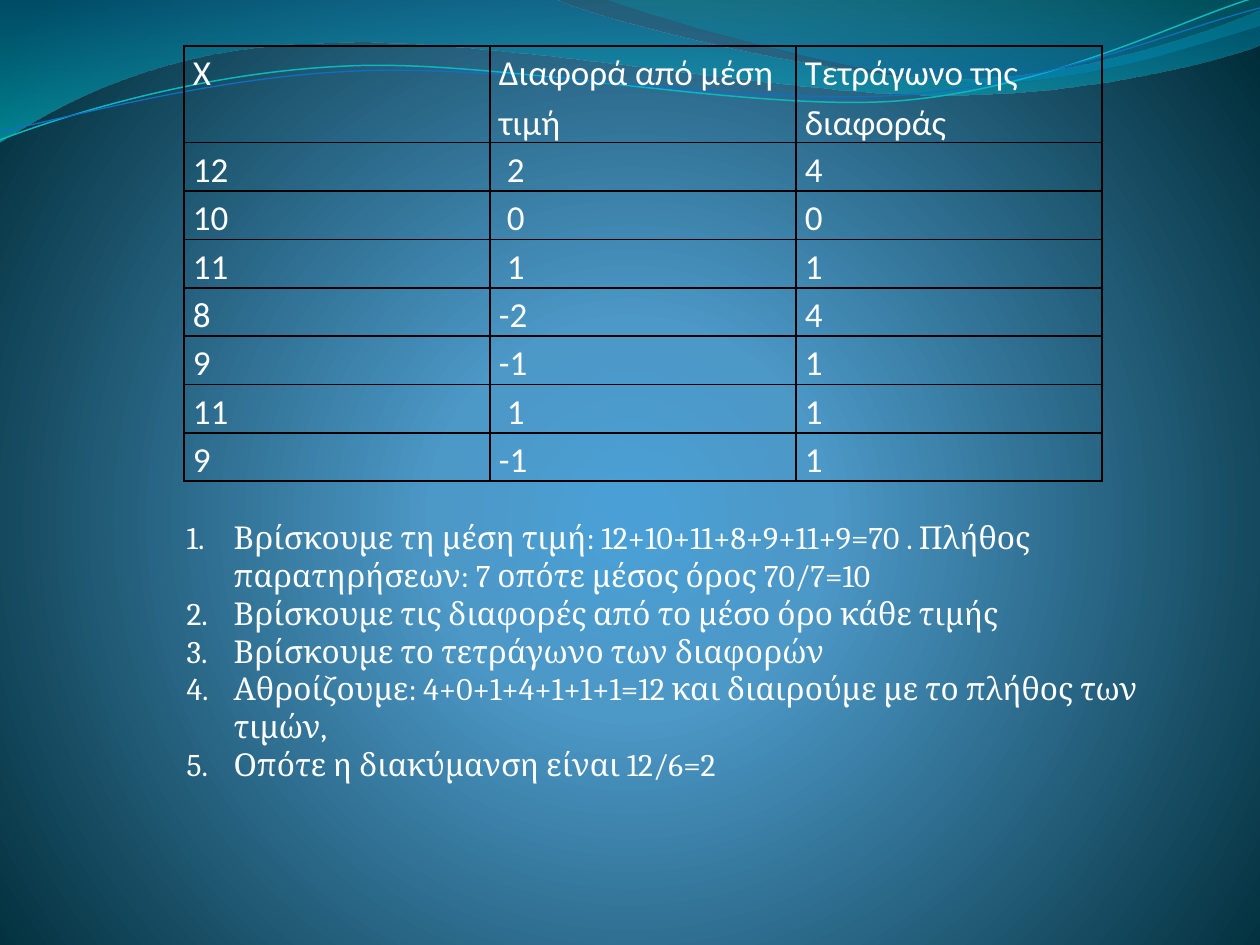
from math import cos, radians, sin

from lxml.etree import SubElement
from pptx import Presentation
from pptx.dml.color import RGBColor as RGB
from pptx.enum.text import MSO_AUTO_SIZE as Fit
from pptx.oxml import parse_xml
from pptx.oxml.ns import nsdecls, qn
from pptx.util import Emu, Pt

ROWS = [
    ("Χ", "Διαφορά από μέση τιμή", "Τετράγωνο της διαφοράς"),
    ("12", " 2", "4"),
    ("10", " 0", "0"),
    ("11", " 1", "1"),
    ("8", "-2", "4"),
    ("9", "-1", "1"),
    ("11", " 1", "1"),
    ("9", "-1", "1"),
]
STEPS = [
    "Βρίσκουμε τη μέση τιμή: 12+10+11+8+9+11+9=70 . Πλήθος παρατηρήσεων: 7 οπότε μέσος όρος 70/7=10",
    "Βρίσκουμε τις διαφορές από το μέσο όρο κάθε τιμής",
    "Βρίσκουμε το τετράγωνο των διαφορών",
    "Αθροίζουμε: 4+0+1+4+1+1+1=12 και διαιρούμε με το πλήθος των τιμών,",
    "Οπότε η διακύμανση είναι 12/6=2",
]

THEME = {
    "text": "FFFFFF",
    "border": "000000",
    "cell": ("Calibri", 20),
    "step": ("Cambria", 18),
    "number": "Calibri",
    # gradient stops: position %, colour, opacity %
    "back": [(0, "4AA0D6", 100), (25, "4C98C7", 100), (100, "002C38", 100)],
    "wide": [(0, "0074A1", 45), (100, "00C6CF", 55)],
    "right": [(0, "00A1A9", 30), (80, "008BBF", 45)],
}
GLOW = '<a:path path="circle"><a:fillToRect l="10000" t="110000" r="10000" b="100000"/></a:path>'
DOWN = '<a:lin ang="5400000" scaled="1"/>'

# Outlines in px: one point is a straight move, three points are a Bezier curve
BANDS = [
    ("wide", [[(0, 0)], [(554, -1)],
              [(600, 21), (837, 79), (955, 79)],
              [(1075, 79), (1207, 33), (1260, 11)], [(1261, 45)],
              [(1238, 55), (1096, 96), (940, 95)],
              [(784, 95), (481, 35), (324, 43)],
              [(163, 45), (58, 105), (-1, 142)]]),
    ("right", [[(604, -1)],
               [(641, 14), (859, 78), (969, 82)],
               [(1079, 87), (1211, 40), (1260, 26)], [(1260, 0)]]),
]
# Colour, width, centre, outline
LINES = [
    ("0AB8BF", 0.85, (629, 72),
     [[(0, 140)], [(60, 117), (199, 72), (349, 66)],
      [(498, 59), (747, 112), (898, 101)], [(1050, 89), (1182, 19), (1257, -3)]]),
    ("0F6FC6", 0.75, (629, 74),
     [[(0, 131)], [(59, 121), (207, 77), (357, 71)],
      [(508, 64), (752, 106), (903, 95)], [(1053, 84), (1186, 26), (1260, 8)]]),
]
TILT = 2.7


def px(n):
    return Emu(round(n * 914400 / 126))


def paint(fill, host, stops, shade):
    """Give the fill inside host a gradient with opacity."""
    fill.background()
    marks = "".join(
        f'<a:gs pos="{pos * 1000}"><a:srgbClr val="{color}">'
        f'<a:alpha val="{alpha * 1000}"/></a:srgbClr></a:gs>'
        for pos, color, alpha in stops)
    old = host.find(".//" + qn("a:noFill"))
    old.getparent().replace(old, parse_xml(
        f'<a:gradFill {nsdecls("a")} rotWithShape="1"><a:gsLst>{marks}</a:gsLst>{shade}</a:gradFill>'))


def turn(point, centre, angle):
    a = radians(angle)
    x, y = point[0] - centre[0], point[1] - centre[1]
    return centre[0] + x * cos(a) - y * sin(a), centre[1] + x * sin(a) + y * cos(a)


def draw(slide, outline, close):
    """Build the outline from all its points, then join each three into a curve."""
    start, *spots = [(px(x), px(y)) for part in outline for x, y in part]
    pen = slide.shapes.build_freeform(*start)
    pen.add_line_segments(spots, close=close)
    shape = pen.convert_to_shape()
    shape.shadow.inherit = False
    moves = iter(list(shape.element.iter(qn("a:lnTo"))))
    for part in outline[1:]:
        steps = [next(moves) for _ in part]
        if len(steps) == 3:
            curve = parse_xml(f'<a:cubicBezTo {nsdecls("a")}/>')
            steps[0].addprevious(curve)
            for step in steps:
                curve.append(step[0])
                step.getparent().remove(step)
    return shape


def style(para, kind):
    font = para.font
    font.name, size = THEME[kind]
    font.size = Pt(size)
    font.color.rgb = RGB.from_string(THEME["text"])


def add_waves(slide, master):
    """Draw the waves and hand them over to the master."""
    waves = []
    for name, outline in BANDS:
        band = draw(slide, outline, True)
        paint(band.fill, band.element, THEME[name], DOWN)
        band.line.fill.background()
        waves.append(band)
    for color, width, centre, outline in LINES:
        level = [[turn(p, centre, TILT) for p in part] for part in outline]
        wave = draw(slide, level, False)
        wave.rotation = -TILT
        wave.fill.background()
        wave.line.color.rgb = RGB.from_string(color)
        wave.line.width = Pt(width)
        waves.append(wave)
    tree = master.shapes.element
    for i, wave in enumerate(waves):
        wave.element.nvSpPr.cNvPr.set("id", str(20 + i))
        tree.insert(2 + i, wave.element)


def frame(cell):
    cell.fill.background()
    props = cell._tc.get_or_add_tcPr()
    for i, side in enumerate("LRTB"):
        props.insert(i, parse_xml(
            f'<a:ln{side} {nsdecls("a")} w="12700"><a:solidFill>'
            f'<a:srgbClr val="{THEME["border"]}"/></a:solidFill></a:ln{side}>'))


def add_grid(slide):
    wide, tall = 306, 38
    cols, count = len(ROWS[0]), len(ROWS)
    grid = slide.shapes.add_table(count, cols, px(184), px(46),
                                  px(wide * cols), px(435)).table
    grid.first_row = grid.horz_banding = False
    for col in grid.columns:
        col.width = px(wide)
    for r, texts in enumerate(ROWS):
        grid.rows[r].height = px(tall)
        for c, text in enumerate(texts):
            cell = grid.cell(r, c)
            cell.text = text
            cell.margin_left = cell.margin_right = px(9)
            cell.margin_top = cell.margin_bottom = 0
            para = cell.text_frame.paragraphs[0]
            para.line_spacing = 1.15
            style(para, "cell")
            frame(cell)


def fill_steps(body):
    body.left, body.top, body.width, body.height = px(174), px(512), px(1062), px(242)
    text = body.text_frame
    text.text = "\n".join(STEPS)
    text.word_wrap = True
    text.auto_size = Fit.SHAPE_TO_FIT_TEXT
    for para in text.paragraphs:
        para.space_before = Pt(0)
        props = para._p.get_or_add_pPr()
        props.set("marL", str(px(47)))
        props.set("indent", str(px(-47)))
        SubElement(props, qn("a:buFont"), typeface=THEME["number"])
        SubElement(props, qn("a:buAutoNum"), type="arabicPeriod")
        style(para, "step")


def main():
    deck = Presentation()
    deck.slide_width, deck.slide_height = px(1260), px(945)
    slide = deck.slides.add_slide(deck.slide_layouts[1])
    title = slide.shapes.title.element
    title.getparent().remove(title)
    paint(slide.background.fill, slide.element, THEME["back"], GLOW)
    add_waves(slide, deck.slide_master)
    add_grid(slide)
    fill_steps(slide.placeholders[1])
    deck.save("out.pptx")


if __name__ == "__main__":
    main()
